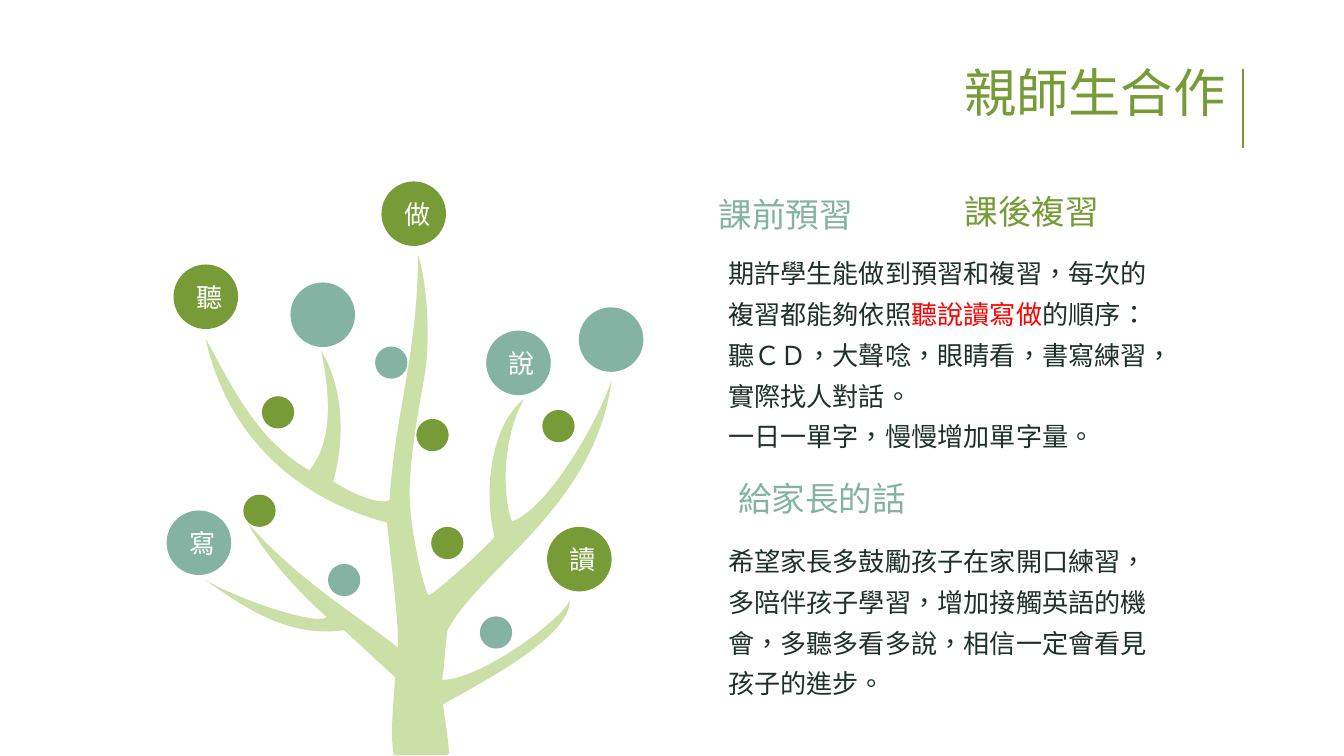
from lxml import etree
from pptx import Presentation
from pptx import util as u
from pptx.dml.color import RGBColor
from pptx.enum import shapes, text
from pptx.oxml.ns import qn

FONT = "Noto Sans CJK SC"
GREEN, TEAL, PALE = "779B37", "84B3A3", "CBE0A6"
DARK, RED, WHITE = "1E302A", "FF0000", "FFFFFF"

TITLE = "親師生合作"

# Text, left, top, width, colour (cm)
HEADINGS = [
    ("課前預習", 13.33, 3.54, 3.07, TEAL),
    ("課後複習", 17.98, 3.48, 3.07, GREEN),
    ("給家長的話", 13.7, 8.91, 3.71, TEAL),
]

# Top, height (cm), paragraphs made of (text, colour) spans
BODIES = [
    (4.57, 4.93, [
        [("期許學生能做到預習和複習，每次的複習都能夠依照", DARK),
         ("聽說讀寫做", RED), ("的順序：", DARK)],
        [("聽ＣＤ，大聲唸，眼睛看，書寫練習，實際找人對話。", DARK)],
        [("一日一單字，慢慢增加單字量。", DARK)],
    ]),
    (10.01, 3.3, [
        [("希望家長多鼓勵孩子在家開口練習，多陪伴孩子學習，增加接觸英語的機會，"
          "多聽多看多說，相信一定會看見孩子的進步。", DARK)],
    ]),
]

# Diameter (cm): left, top, colour, label
FRUITS = {
    1.22: [(7.21, 3.43, GREEN, "做"), (10.94, 5.81, TEAL, ""),
           (3.28, 5.0, GREEN, "聽"), (3.15, 9.65, TEAL, "寫"),
           (10.34, 9.96, GREEN, "讀"), (9.19, 6.25, TEAL, "說"),
           (5.49, 5.34, TEAL, "")],
    0.61: [(7.87, 7.92, GREEN, ""), (10.25, 7.75, GREEN, ""),
           (7.09, 6.55, TEAL, ""), (4.95, 7.49, GREEN, ""),
           (4.6, 9.35, GREEN, ""), (6.2, 10.66, TEAL, ""),
           (8.15, 9.96, GREEN, ""), (9.07, 11.65, TEAL, "")],
}

# Outline in hundredths of an inch: a pair is a straight step,
# six numbers are the two handles and the end of a curve
TREE_UNIT = u.Cm(2.54) / 100
TREE_START = (293, 562)
TREE_STEPS = [
    (290, 545, 293, 523, 294, 504), (256, 469),
    (212, 475, 180, 450, 153, 432), (184, 449, 239, 466, 243, 459),
    (232, 450, 198, 416, 185, 390), (224, 434, 272, 462, 296, 482),
    (297, 464, 291, 420, 288, 389), (213, 369, 167, 317, 153, 252),
    (174, 290, 191, 327, 230, 350), (249, 328, 245, 291, 239, 261),
    (254, 286, 258, 322, 248, 358), (257, 365, 283, 377, 290, 372),
    (293, 312, 311, 263, 311, 190), (317, 206, 320, 244, 317, 272),
    (315, 288, 306, 328, 305, 361), (303, 385, 315, 439, 319, 443),
    (322, 443, 367, 403, 368, 399), (359, 365, 366, 315, 390, 297),
    (373, 326, 374, 372, 381, 388), (407, 379, 444, 316, 455, 283),
    (443, 377, 357, 423, 333, 469), (331, 482, 331, 494, 329, 506),
    (356, 506, 415, 464, 424, 447), (424, 474, 360, 507, 330, 524),
    (329, 525, 334, 549, 334, 561), (333, 561, 333, 562, 332, 562),
]


def colour(value):
    return RGBColor.from_string(value)


def write(para, words, size=14, ink=DARK):
    span = para.add_run()
    span.text = words
    span.font.size = u.Pt(size)
    span.font.color.rgb = colour(ink)
    span.font.name = FONT
    span.font._element.set("lang", "zh-TW")
    east_asian = etree.SubElement(span.font._element, qn("a:ea"))
    east_asian.set("typeface", FONT)


def paint(shape, fill):
    shape.shadow.inherit = False
    shape.fill.solid()
    shape.fill.fore_color.rgb = colour(fill)
    shape.line.fill.background()


def add_curved_shape(parent, start, steps, unit):
    """Build the outline through the step ends, then bend the curved steps."""
    ends = [step[-2:] for step in steps]
    builder = parent.shapes.build_freeform(*start, scale=unit)
    builder.add_line_segments(ends, close=True)
    shape = builder.convert_to_shape()

    left = min(x for x, y in [start, *ends])
    top = min(y for x, y in [start, *ends])
    straight = list(shape._element.iter(qn("a:lnTo")))
    for line, step in zip(straight, steps):
        if len(step) == 6:
            curve = etree.Element(qn("a:cubicBezTo"))
            for x, y in zip(step[::2], step[1::2]):
                point = etree.SubElement(curve, qn("a:pt"))
                point.set("x", str(x - left))
                point.set("y", str(y - top))
            line.getparent().replace(line, curve)
    return shape


def add_box(page, left, top, width, height, wrap):
    box = page.shapes.add_textbox(u.Cm(left), u.Cm(top), u.Cm(width), u.Cm(height))
    box.text_frame.word_wrap = wrap
    box.text_frame.auto_size = text.MSO_AUTO_SIZE.SHAPE_TO_FIT_TEXT
    return box.text_frame


def add_title(page):
    title = page.shapes.title
    title.left, title.top = u.Cm(13.71), u.Cm(1.18)
    title.width, title.height = u.Cm(9.7), u.Cm(1.27)
    title.text_frame.auto_size = text.MSO_AUTO_SIZE.NONE
    title.text_frame.vertical_anchor = text.MSO_ANCHOR.MIDDLE
    para = title.text_frame.paragraphs[0]
    para.alignment = text.PP_ALIGN.RIGHT
    para.line_spacing = 0.9
    write(para, TITLE, size=28, ink=GREEN)

    rule = page.shapes.add_connector(
        shapes.MSO_CONNECTOR.STRAIGHT, u.Cm(23.49), u.Cm(1.3), u.Cm(23.49), u.Cm(2.79))
    rule.line.color.rgb = colour(GREEN)
    rule.line.width = u.Pt(1.5)
    etree.SubElement(rule._element.spPr, qn("a:effectLst"))


def add_tree(page):
    group = page.shapes.add_group_shape()
    paint(add_curved_shape(group, TREE_START, TREE_STEPS, TREE_UNIT), PALE)

    for size, fruits in FRUITS.items():
        for left, top, fill, label in fruits:
            fruit = group.shapes.add_shape(
                shapes.MSO_SHAPE.OVAL, u.Cm(left), u.Cm(top), u.Cm(size), u.Cm(size))
            paint(fruit, fill)
            if label:
                fruit.text_frame.vertical_anchor = text.MSO_ANCHOR.MIDDLE
                para = fruit.text_frame.paragraphs[0]
                para.alignment = text.PP_ALIGN.CENTER
                write(para, label, ink=WHITE)


def add_texts(page):
    for words, left, top, width, ink in HEADINGS:
        frame = add_box(page, left, top, width, 1.02, wrap=False)
        write(frame.paragraphs[0], words, size=18, ink=ink)

    for top, height, paras in BODIES:
        frame = add_box(page, 13.51, top, 8.85, height, wrap=True)
        for i, spans in enumerate(paras):
            para = frame.add_paragraph() if i else frame.paragraphs[0]
            para.line_spacing = 1.3
            para._p.get_or_add_pPr().set("hangingPunct", "1")
            for words, ink in spans:
                write(para, words, ink=ink)


def main():
    deck = Presentation()
    deck.slide_width, deck.slide_height = u.Cm(25.4), u.Cm(14.29)
    page = deck.slides.add_slide(deck.slide_layouts.get_by_name("Title Only"))
    add_title(page)
    add_tree(page)
    add_texts(page)
    deck.save("out.pptx")


if __name__ == "__main__":
    main()
